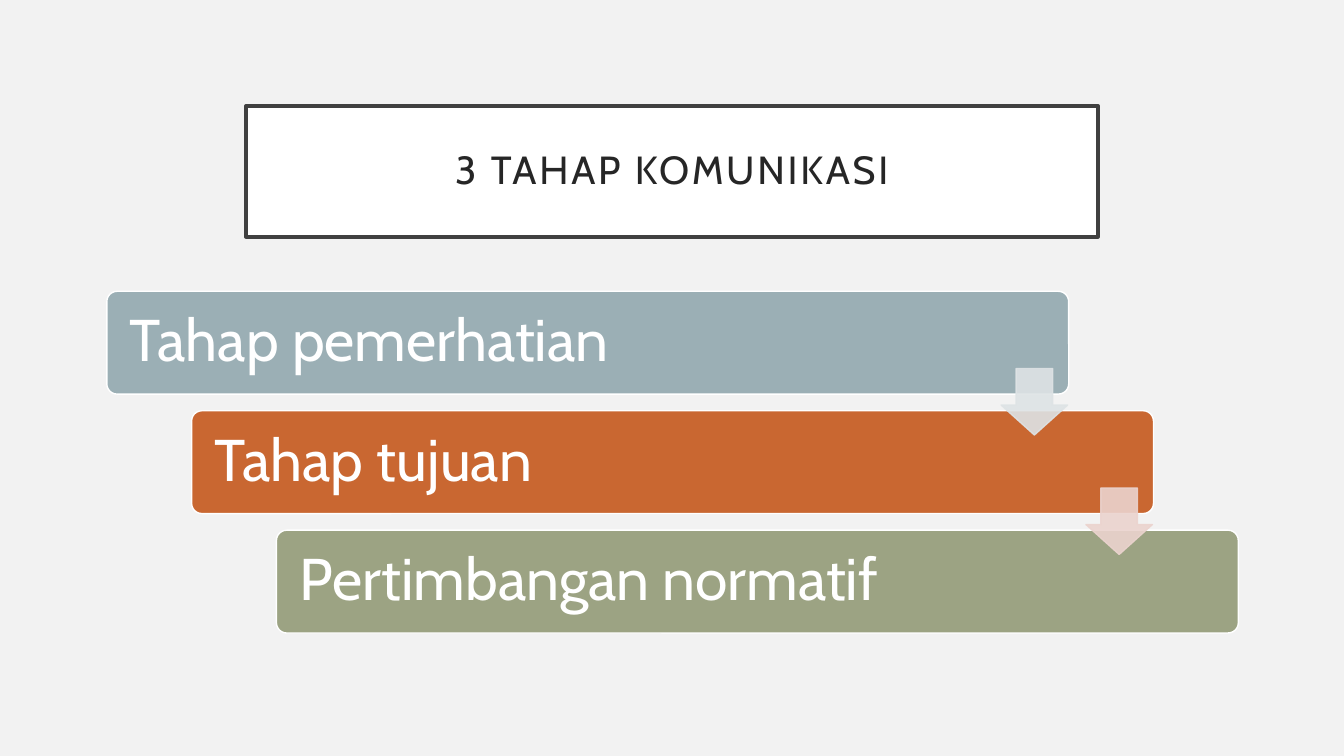
from dataclasses import dataclass

from lxml import etree
from pptx import Presentation
from pptx.dml.color import RGBColor
from pptx.enum.shapes import MSO_SHAPE
from pptx.enum.text import MSO_ANCHOR, PP_ALIGN
from pptx.oxml.ns import qn
from pptx.shapes.autoshape import Shape
from pptx.slide import Slide
from pptx.util import Inches, Pt

RECTANGLE = MSO_SHAPE.RECTANGLE
ROUNDED = MSO_SHAPE.ROUNDED_RECTANGLE
DOWN_ARROW = MSO_SHAPE.DOWN_ARROW
MIDDLE = MSO_ANCHOR.MIDDLE
LEFT, CENTER = PP_ALIGN.LEFT, PP_ALIGN.CENTER

FONT = "Cabin"
PAPER = RGBColor(0xF2, 0xF2, 0xF2)
WHITE = RGBColor(0xFF, 0xFF, 0xFF)
FRAME = RGBColor(0x40, 0x40, 0x40)
INK = RGBColor(0x26, 0x26, 0x26)
BLUE_GREY = RGBColor(0x9B, 0xAF, 0xB5)
ORANGE = RGBColor(0xC9, 0x67, 0x31)
OLIVE = RGBColor(0x9C, 0xA3, 0x83)
PALE_BLUE = RGBColor(0xDE, 0xE3, 0xE5)
PALE_ROSE = RGBColor(0xEB, 0xD3, 0xCE)

WIDTH, HEIGHT = Inches(13.33), Inches(7.5)
COLUMN, ROW = WIDTH / 100, HEIGHT / 100


@dataclass(frozen=True)
class Area:
    left: float
    top: float
    width: float
    height: float

    def stepped(self, index: int) -> "Area":
        return Area(self.left + index * STEP_COLUMNS, self.top + index * STEP_ROWS,
                    self.width, self.height)


@dataclass(frozen=True)
class Stage:
    label: str
    color: RGBColor


STEP_COLUMNS, STEP_ROWS = 6.31, 15.8
TITLE_AREA = Area(18.3, 14, 63.4, 17.33)
FIRST_BAR = Area(7.95, 38.53, 71.57, 13.6)
FIRST_ARROW = Area(74.49, 48.75, 4.95, 8.8)

STAGES = (
    Stage("Tahap pemerhatian", BLUE_GREY),
    Stage("Tahap tujuan", ORANGE),
    Stage("Pertimbangan normatif", OLIVE),
)
ARROW_COLORS = (PALE_BLUE, PALE_ROSE)


def add_box(page: Slide, kind: MSO_SHAPE, area: Area, fill: RGBColor,
            line: RGBColor, weight: float) -> Shape:
    box = page.shapes.add_shape(
        kind, round(area.left * COLUMN), round(area.top * ROW),
        round(area.width * COLUMN), round(area.height * ROW))
    box.shadow.inherit = False
    box.fill.solid()
    box.fill.fore_color.rgb = fill
    box.line.color.rgb = line
    box.line.width = Pt(weight)
    return box


def write(box: Shape, text: str, size: float, color: RGBColor,
          align: PP_ALIGN, inset: float) -> None:
    frame = box.text_frame
    frame.word_wrap = True
    frame.vertical_anchor = MIDDLE
    frame.margin_left = frame.margin_right = Inches(inset)
    frame.margin_top = frame.margin_bottom = Inches(inset)
    para = frame.paragraphs[0]
    para.text = text
    para.alignment = align
    para.line_spacing = 0.9
    para.font.name = FONT
    para.font.size = Pt(size)
    para.font.color.rgb = color


def add_title(page: Slide) -> None:
    box = add_box(page, RECTANGLE, TITLE_AREA, WHITE, FRAME, 2.5)
    write(box, "3 TAHAP KOMUNIKASI", 28, INK, CENTER, 0.2)
    span = box.text_frame.paragraphs[0].runs[0]
    span.font._element.set("spc", "200")


def add_stage(page: Slide, index: int, stage: Stage) -> None:
    box = add_box(page, ROUNDED, FIRST_BAR.stepped(index), stage.color, WHITE, 1)
    box.adjustments[0] = 0.1
    write(box, stage.label, 42, WHITE, LEFT, 0.2)


def add_arrow(page: Slide, index: int, color: RGBColor) -> None:
    arrow = add_box(page, DOWN_ARROW, FIRST_ARROW.stepped(index), color, color, 1)
    arrow.adjustments[0] = 0.55
    arrow.adjustments[1] = 0.45
    for tint in arrow._element.spPr.iter(qn("a:srgbClr")):
        etree.SubElement(tint, qn("a:alpha")).set("val", "90000")


def main() -> None:
    deck = Presentation()
    deck.slide_width, deck.slide_height = WIDTH, HEIGHT
    page = deck.slides.add_slide(deck.slide_layouts[6])
    page.background.fill.solid()
    page.background.fill.fore_color.rgb = PAPER
    add_title(page)
    for index, stage in enumerate(STAGES):
        add_stage(page, index, stage)
    for index, color in enumerate(ARROW_COLORS):
        add_arrow(page, index, color)
    deck.save("out.pptx")


if __name__ == "__main__":
    main()
